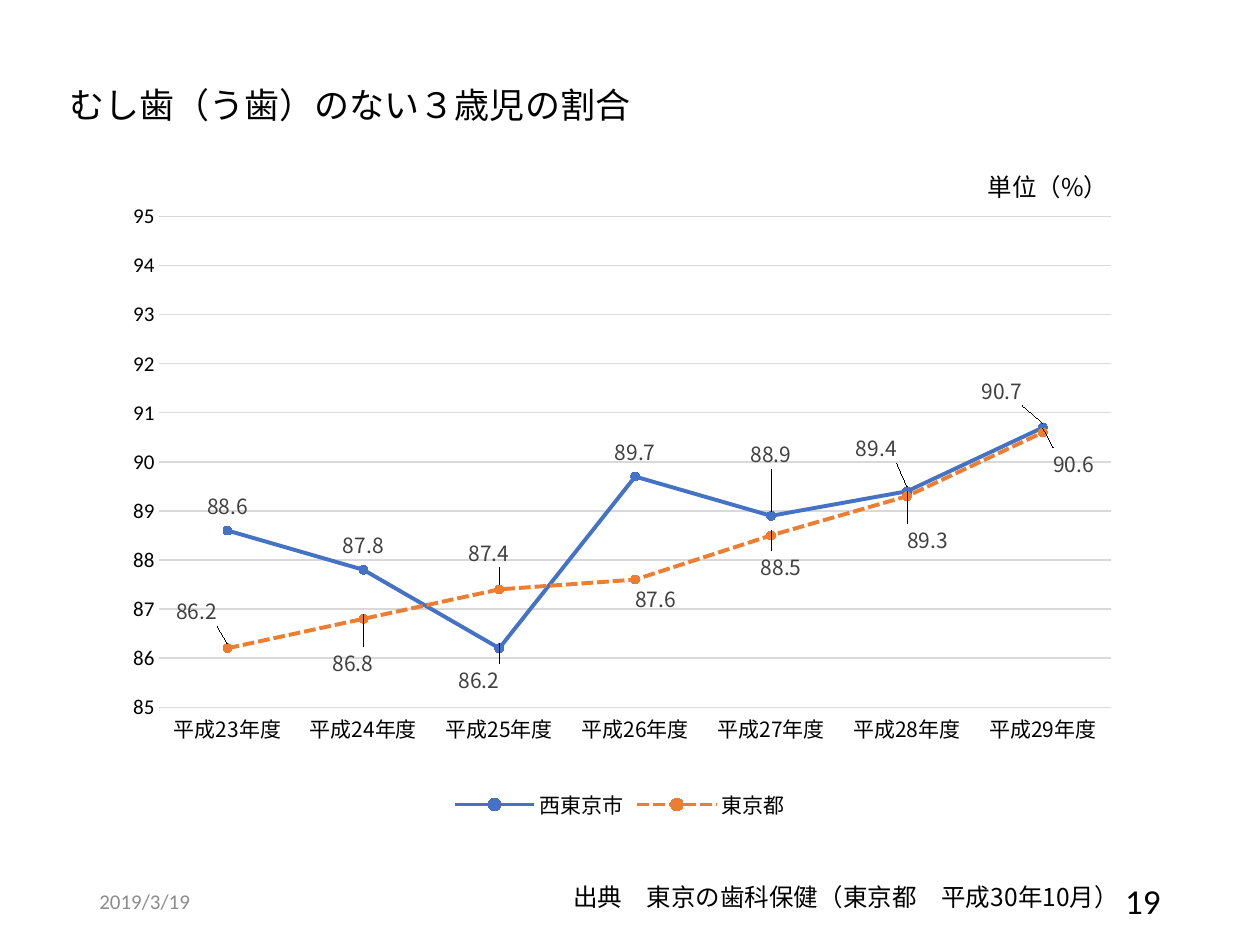
from dataclasses import dataclass

from lxml.etree import SubElement
from pptx import Presentation
from pptx.chart.data import CategoryChartData
from pptx.dml.color import RGBColor
from pptx.enum.chart import (XL_CHART_TYPE, XL_LABEL_POSITION, XL_LEGEND_POSITION,
                             XL_MARKER_STYLE, XL_TICK_MARK)
from pptx.enum.dml import MSO_LINE
from pptx.enum.text import MSO_ANCHOR, MSO_AUTO_SIZE, PP_ALIGN
from pptx.oxml.ns import qn
from pptx.util import Inches, Pt


@dataclass(frozen=True)
class Theme:
    black: str = "000000"
    date: str = "8C8C8C"
    label: str = "404040"
    grid: str = "D9D9D9"
    city: str = "4472C4"
    tokyo: str = "ED7D31"
    japanese: str = "Noto Sans CJK JP"
    latin: str = "Calibri"
    heading: int = 20
    note: int = 14
    small: int = 12
    base: int = 10


THEME = Theme()
COLUMNS, ROWS = 100, 75

# Content: places are (column, row, columns, rows)
TITLE = ("むし歯（う歯）のない３歳児の割合", (4.5, 6.1, 75.7, 4.4))
CHART_PLACE = (8.6, 16.2, 81.2, 49.3)
PLOT_SHARE = {"x": 0.05, "y": 0.02, "w": 0.93, "h": 0.79}
NOTES = [
    dict(text="出典　東京の歯科保健（東京都　平成30年10月）", place=(17.3, 69.5, 72.5, 3.4),
         align=PP_ALIGN.RIGHT),
    dict(text="単位（%）", place=(77.4, 13.2, 16.3, 3)),
    dict(text="19", place=(70.6, 69.5, 22.5, 4), align=PP_ALIGN.RIGHT,
         anchor=MSO_ANCHOR.MIDDLE, size=THEME.heading, name=THEME.latin),
    dict(text="2019/3/19", place=(6.9, 69.5, 22.5, 4), anchor=MSO_ANCHOR.MIDDLE,
         size=THEME.small, name=THEME.latin, color=THEME.date),
]
YEARS = [f"平成{year}年度" for year in range(23, 30)]
# Shifts move a label from above its point, in shares of the chart
SERIES = [
    dict(name="西東京市", values=(88.6, 87.8, 86.2, 89.7, 88.9, 89.4, 90.7),
         color=THEME.city, dash=None,
         shifts={2: (-0.02, 0.09), 4: (0, -0.06), 5: (-0.03, -0.03), 6: (-0.04, -0.02)}),
    dict(name="東京都", values=(86.2, 86.8, 87.4, 87.6, 88.5, 89.3, 90.6),
         color=THEME.tokyo, dash=MSO_LINE.SQUARE_DOT,
         shifts={0: (-0.03, -0.02), 1: (-0.01, 0.11), 2: (-0.01, -0.02), 3: (0.02, 0.07),
                 4: (0.01, 0.09), 5: (0.02, 0.11), 6: (0.03, 0.09)}),
]


def set_attributes(target, formats):
    for key, value in formats.items():
        setattr(target, key, value)


def set_font(font, size, name=THEME.japanese, color=THEME.black):
    set_attributes(font, {"size": Pt(size), "name": name, "bold": False})
    font.color.rgb = RGBColor.from_string(color)


def set_line(line, color, width):
    line.color.rgb = RGBColor.from_string(color)
    line.width = Pt(width)


def locate(deck, place):
    column, row = deck.slide_width / COLUMNS, deck.slide_height / ROWS
    return [round(cells * unit) for cells, unit in zip(place, (column, row) * 2)]


def write_text(box, text, align=PP_ALIGN.LEFT, anchor=MSO_ANCHOR.TOP,
               size=THEME.note, name=THEME.japanese, color=THEME.black):
    frame = box.text_frame
    set_attributes(frame, {"word_wrap": True, "vertical_anchor": anchor,
                           "auto_size": MSO_AUTO_SIZE.NONE})
    para = frame.paragraphs[0]
    para.alignment = align
    span = para.add_run()
    span.text = text
    set_font(span.font, size, name, color)


def add_east_asian_fonts(element):
    for latin in list(element.iter(qn("a:latin"))):
        face = SubElement(latin.getparent(), qn("a:ea"), typeface=latin.get("typeface"))
        latin.addnext(face)


def fill_layout(layout, values):
    for child in list(layout):
        layout.remove(child)
    manual = SubElement(layout, qn("c:manualLayout"))
    for tag, value in values.items():
        SubElement(manual, qn(f"c:{tag}"), val=str(value))


def format_axes(chart):
    for axis, name in ((chart.category_axis, THEME.japanese), (chart.value_axis, THEME.latin)):
        set_attributes(axis, {"major_tick_mark": XL_TICK_MARK.NONE,
                              "minor_tick_mark": XL_TICK_MARK.NONE})
        set_font(axis.tick_labels.font, THEME.small, name)
    set_line(chart.category_axis.format.line, THEME.grid, 0.75)
    values = chart.value_axis
    set_attributes(values, {"minimum_scale": 85, "maximum_scale": 95, "major_unit": 1,
                            "has_major_gridlines": True})
    values.format.line.fill.background()
    set_line(values.major_gridlines.format.line, THEME.grid, 0.75)
    set_attributes(values.tick_labels, {"number_format": "0", "number_format_is_linked": False})


def format_series(series, item):
    series.smooth = False
    set_line(series.format.line, item["color"], 2.25)
    if item["dash"]:
        series.format.line.dash_style = item["dash"]
    marker = series.marker
    set_attributes(marker, {"style": XL_MARKER_STYLE.CIRCLE, "size": 5})
    marker.format.fill.solid()
    marker.format.fill.fore_color.rgb = RGBColor.from_string(item["color"])
    set_line(marker.format.line, item["color"], 0.75)

    # Value labels, some moved clear of the lines
    labels = series.data_labels
    set_attributes(labels, {"show_value": True, "position": XL_LABEL_POSITION.ABOVE,
                            "number_format": "0.0", "number_format_is_linked": False})
    set_font(labels.font, THEME.small, color=THEME.label)
    for index in item["shifts"]:
        label = series.points[index].data_label
        set_font(label.font, THEME.small, color=THEME.label)
        label.position = XL_LABEL_POSITION.ABOVE
    for element in series._element.iter(qn("c:dLbl")):
        mark = element.find(qn("c:idx"))
        layout = SubElement(element, qn("c:layout"))
        mark.addnext(layout)
        fill_layout(layout, dict(zip("xy", item["shifts"][int(mark.get("val"))])))


def add_line_chart(deck, page):
    data = CategoryChartData(number_format="0.0")
    data.categories = YEARS
    for item in SERIES:
        data.add_series(item["name"], item["values"])
    chart = page.shapes.add_chart(XL_CHART_TYPE.LINE_MARKERS, *locate(deck, CHART_PLACE), data).chart
    set_attributes(chart, {"has_title": False, "has_legend": True})
    set_font(chart.font, THEME.base, THEME.latin)
    set_attributes(chart.legend, {"position": XL_LEGEND_POSITION.BOTTOM, "include_in_layout": False})
    set_font(chart.legend.font, THEME.small)
    chart.plots[0].vary_by_categories = False
    format_axes(chart)
    for series, item in zip(chart.plots[0].series, SERIES):
        format_series(series, item)

    # Fixed inner plot area
    area = chart._chartSpace.find(f".//{qn('c:plotArea')}")
    layout = area.find(qn("c:layout"))
    if layout is None:
        layout = SubElement(area, qn("c:layout"))
        area.insert(0, layout)
    fill_layout(layout, {"layoutTarget": "inner", "xMode": "edge", "yMode": "edge", **PLOT_SHARE})
    add_east_asian_fonts(chart._chartSpace)


def main():
    deck = Presentation()
    set_attributes(deck, {"slide_width": Inches(10), "slide_height": Inches(7.5)})
    page = deck.slides.add_slide(deck.slide_layouts[5])

    # Title
    text, place = TITLE
    title = page.shapes.title
    set_attributes(title, dict(zip(("left", "top", "width", "height"), locate(deck, place))))
    write_text(title, text, size=THEME.heading)

    # Chart, then source, unit, page number and date
    add_line_chart(deck, page)
    for note in NOTES:
        formats = dict(note)
        box = page.shapes.add_textbox(*locate(deck, formats.pop("place")))
        write_text(box, **formats)
    add_east_asian_fonts(page.shapes._spTree)
    deck.save("out.pptx")


if __name__ == "__main__":
    main()
